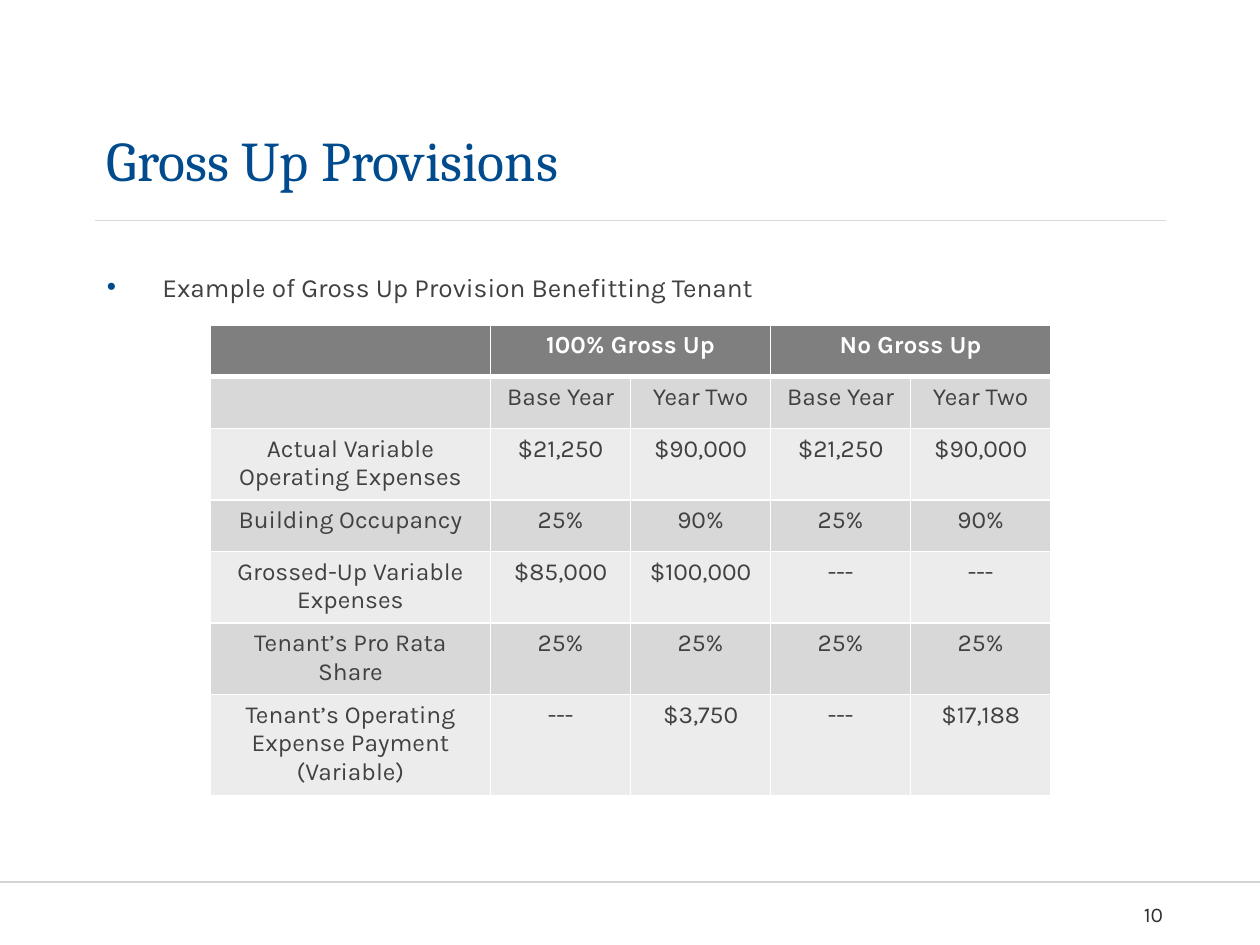
from lxml import etree
from pptx import Presentation
from pptx import util as u
from pptx.dml.color import RGBColor
from pptx.enum import shapes, text
from pptx.oxml.ns import qn

BLUE = "004B8D"
GRAY = "414042"
WHITE = "FFFFFF"
HEADER_FILL = "7F7F7F"
BAND_FILLS = ("D8D8D8", "ECECEC")
ROWS = [
    ["", "100% Gross Up", "", "No Gross Up", ""],
    ["", "Base Year", "Year Two", "Base Year", "Year Two"],
    ["Actual Variable Operating Expenses", "$21,250", "$90,000", "$21,250", "$90,000"],
    ["Building Occupancy", "25%", "90%", "25%", "90%"],
    ["Grossed-Up Variable Expenses", "$85,000", "$100,000", "---", "---"],
    ["Tenant’s Pro Rata Share", "25%", "25%", "25%", "25%"],
    ["Tenant’s Operating Expense Payment (Variable)", "---", "$3,750", "---", "$17,188"],
]


def color(value):
    return RGBColor.from_string(value)


def write(frame, words, size, fill, font="Karla", bold=False, bullet=None,
          align=text.PP_ALIGN.LEFT, line_spacing=None, space_after=None):
    paragraph = frame.paragraphs[0]
    paragraph.alignment = align
    paragraph.line_spacing = line_spacing
    paragraph.space_after = space_after
    if bullet:
        properties = paragraph._p.get_or_add_pPr()
        indent = u.Inches(0.44)
        properties.set("marL", str(indent))
        properties.set("indent", str(-indent))
        bullet_color = etree.SubElement(properties, qn("a:buClr"))
        etree.SubElement(bullet_color, qn("a:srgbClr"), val=bullet)
        etree.SubElement(properties, qn("a:buFont"), typeface="Arial")
        etree.SubElement(properties, qn("a:buChar"), char="•")
    paragraph.font.size = u.Pt(size)
    if words:
        run = paragraph.add_run()
        run.text = words
        run.font.size = u.Pt(size)
        run.font.name = font
        run.font.bold = bold
        run.font.color.rgb = color(fill)


def add_text(slide, box, words, size, fill, anchor=text.MSO_ANCHOR.TOP,
             top_inset=0.05, **style):
    shape = slide.shapes.add_textbox(*map(u.Inches, box))
    frame = shape.text_frame
    frame.word_wrap = True
    frame.vertical_anchor = anchor
    frame.margin_top = u.Inches(top_inset)
    write(frame, words, size, fill, **style)


def add_rule(slide, left, top, width, fill, weight):
    line = slide.shapes.add_connector(
        shapes.MSO_CONNECTOR.STRAIGHT, u.Inches(left), u.Inches(top),
        u.Inches(left + width), u.Inches(top))
    line.line.color.rgb = color(fill)
    line.line.width = u.Pt(weight)
    etree.SubElement(line._element.spPr, qn("a:effectLst"))


def set_borders(cell, top, bottom):
    properties = cell._tc.get_or_add_tcPr()
    weights = {"lnL": 1, "lnR": 1, "lnT": top, "lnB": bottom}
    for index, (edge, weight) in enumerate(weights.items()):
        border = etree.Element(qn(f"a:{edge}"), w=str(u.Pt(weight)))
        solid = etree.SubElement(border, qn("a:solidFill"))
        etree.SubElement(solid, qn("a:srgbClr"), val=WHITE)
        properties.insert(index, border)


def add_expense_table(slide, left, top, width):
    row_height = 0.41
    unit = width / 6
    table = slide.shapes.add_table(
        len(ROWS), len(ROWS[0]), u.Inches(left), u.Inches(top),
        u.Inches(width), u.Inches(row_height * len(ROWS))).table
    for index, column in enumerate(table.columns):
        column.width = u.Inches(unit * (2 if index == 0 else 1))
    for first in (1, 3):
        table.cell(0, first).merge(table.cell(0, first + 1))
    for row, values in enumerate(ROWS):
        table.rows[row].height = u.Inches(row_height)
        header = row == 0
        fill = HEADER_FILL if header else BAND_FILLS[(row - 1) % 2]
        for column, value in enumerate(values):
            cell = table.cell(row, column)
            cell.fill.solid()
            cell.fill.fore_color.rgb = color(fill)
            set_borders(cell, top=3 if row == 1 else 1, bottom=3 if header else 1)
            write(cell.text_frame, value, 14, WHITE if header else GRAY,
                  bold=header, align=text.PP_ALIGN.CENTER)


def add_heading(slide, left, top, width):
    add_text(slide, (left, top, width, 0.75), "Gross Up Provisions", 32, BLUE,
             font="Cambria", anchor=text.MSO_ANCHOR.BOTTOM)
    add_rule(slide, left, top + 0.92, width, "D9D9D9", 0.75)


def add_body(slide, left, top, width, height):
    add_text(slide, (left, top, width, height),
             "Example of Gross Up Provision Benefitting Tenant", 15, GRAY,
             top_inset=0.2, bullet=BLUE, line_spacing=1.12, space_after=u.Pt(4))


def add_footer(slide, top, width):
    add_rule(slide, 0, top, width, "D3D3D3", 1.5)
    add_text(slide, (8.58, top + 0.08, 0.75, 0.35), "10", 12, "313031",
             anchor=text.MSO_ANCHOR.MIDDLE, align=text.PP_ALIGN.RIGHT)


def main():
    presentation = Presentation()
    presentation.slide_width = u.Inches(10)
    presentation.slide_height = u.Inches(7.5)
    slide = presentation.slides.add_slide(presentation.slide_layouts[6])
    add_footer(slide, 7, 10)
    add_heading(slide, 0.75, 0.83, 8.5)
    add_body(slide, 0.75, 1.92, 8.5, 4.33)
    add_expense_table(slide, 1.67, 2.58, 6.67)
    presentation.save("out.pptx")


if __name__ == "__main__":
    main()
